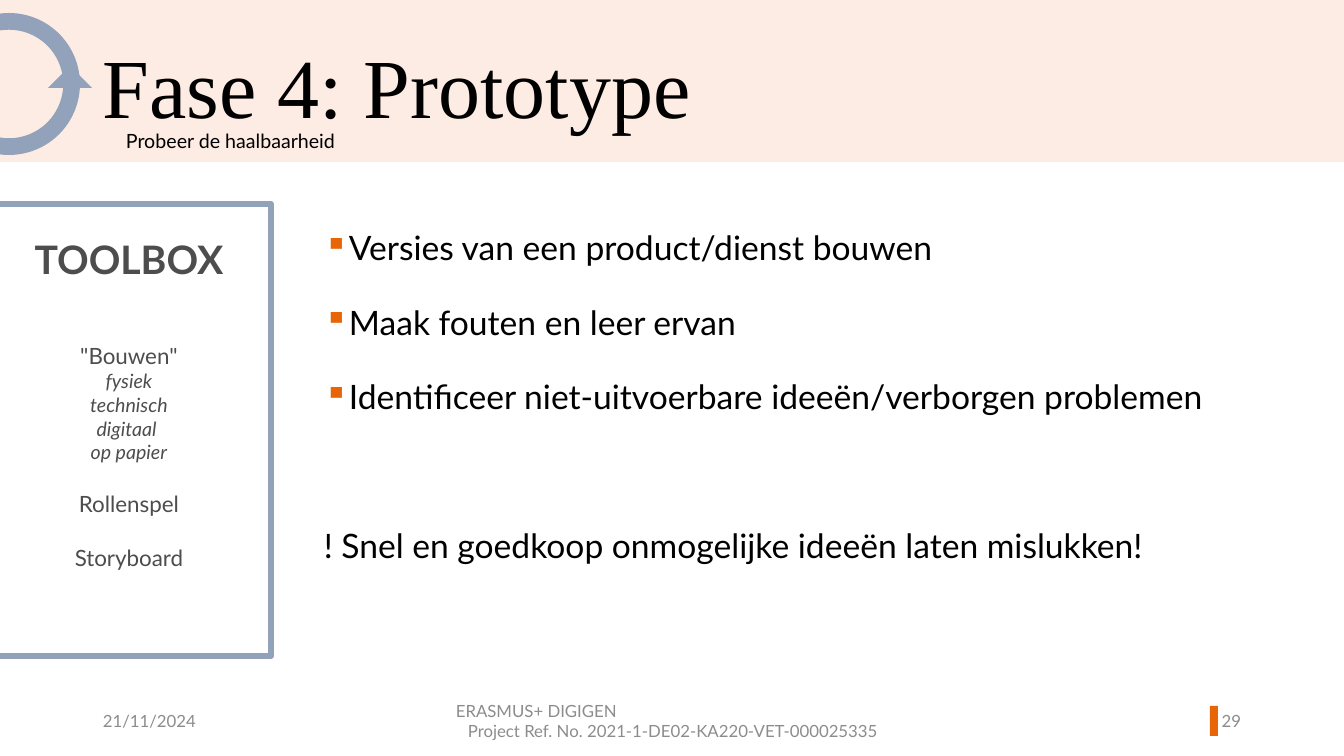
import pptx
import pptx.dml.color
import pptx.enum.shapes
import pptx.enum.text
import pptx.oxml
import pptx.oxml.ns
import pptx.util

RGB = pptx.dml.color.RGBColor
SHAPE = pptx.enum.shapes.MSO_SHAPE
ALIGN = pptx.enum.text.PP_ALIGN
ANCHOR = pptx.enum.text.MSO_ANCHOR
Pt = pptx.util.Pt

PEACH = RGB(0xFD, 0xEC, 0xE3)
ORANGE = RGB(0xE8, 0x65, 0x07)
STEEL = RGB(0x92, 0xA2, 0xBA)
WHITE = RGB(0xFF, 0xFF, 0xFF)
BLACK = RGB(0, 0, 0)
DARK = RGB(0x4D, 0x4D, 0x4D)
GREY = RGB(0x8C, 0x8C, 0x8C)

SCALE = 914400 / 100.8


def px(n):
    return round(n * SCALE)


def shape(parent, kind, x, y, w, h, fill, line=None, width=0):
    item = parent.shapes.add_shape(kind, px(x), px(y), px(w), px(h))
    item.shadow.inherit = False
    item.fill.solid()
    item.fill.fore_color.rgb = fill
    if line is None:
        item.line.fill.background()
    else:
        item.line.color.rgb = line
        item.line.width = Pt(width)
    return item


def box(slide, x, y, w, h, anchor=ANCHOR.TOP):
    frame = slide.shapes.add_textbox(px(x), px(y), px(w), px(h)).text_frame
    frame.word_wrap = True
    frame.vertical_anchor = anchor
    return frame


def write(frame, text, size, color, font="Lato", bold=False, italic=False,
          align=ALIGN.LEFT, before=0, spacing=1.0, bullet=False):
    """Fill the first empty paragraph, or add one."""
    para = frame.paragraphs[-1]
    if para.runs:
        para = frame.add_paragraph()
    para.alignment = align
    para.space_before = Pt(before)
    para.line_spacing = spacing
    run = para.add_run()
    run.text = text
    run.font.name = font
    run.font.size = Pt(size)
    run.font.bold = bold
    run.font.italic = italic
    run.font.color.rgb = color
    if bullet:
        props = para._p.get_or_add_pPr()
        props.set("marL", str(px(25)))
        props.set("indent", str(-px(25)))
        ns = pptx.oxml.ns.nsdecls("a")
        for xml in (f'<a:buClr {ns}><a:srgbClr val="{ORANGE}"/></a:buClr>',
                    f'<a:buChar {ns} char="▪"/>'):
            props.append(pptx.oxml.parse_xml(xml))


def header(slide, x, y, w, h):
    shape(slide, SHAPE.RECTANGLE, x, y, w, h, PEACH)
    # Title and subtitle
    write(box(slide, x + 93, y + 41, 1001, 86), "Fase 4: Prototype", 60, BLACK,
          font="Times New Roman", spacing=0.9)
    write(box(slide, x + 116, y + 124, 391, 34), "Probeer de haalbaarheid", 14, BLACK)
    # Loop arrow
    loop = slide.shapes.add_group_shape()
    ring = shape(loop, SHAPE.DONUT, x - 62, y + 13, 142, 142, STEEL)
    ring.adjustments[0] = 0.118
    shape(loop, SHAPE.ISOSCELES_TRIANGLE, x + 48, y + 66, 44, 22, STEEL)


def toolbox(slide, x, y, w, h):
    frame = shape(slide, SHAPE.RECTANGLE, x, y, w, h, WHITE, STEEL, 4.5).text_frame
    frame.word_wrap = True
    frame.vertical_anchor = ANCHOR.TOP
    frame.margin_top = px(31)
    write(frame, "TOOLBOX", 28, DARK, bold=True, align=ALIGN.CENTER)
    write(frame, '"Bouwen"', 16, DARK, align=ALIGN.CENTER, before=43.2)
    for way in ("fysiek", "technisch", "digitaal ", "op papier"):
        write(frame, way, 14, DARK, italic=True, align=ALIGN.CENTER)
    for tool in ("Rollenspel", "Storyboard"):
        write(frame, tool, 16, DARK, align=ALIGN.CENTER, before=19.2)


def body(slide, x, y, w, h):
    frame = box(slide, x, y, w, h)
    for point in ("Versies van een product/dienst bouwen",
                  "Maak fouten en leer ervan",
                  "Identificeer niet-uitvoerbare ideeën/verborgen problemen"):
        write(frame, point, 24, BLACK, before=10, spacing=1.5, bullet=True)
    write(frame, "! Snel en goedkoop onmogelijke ideeën laten mislukken!", 24, BLACK,
          before=63.2, spacing=1.5)


def footer(slide, x, y, w, h):
    write(box(slide, x, y, 302, h, ANCHOR.MIDDLE), "21/11/2024", 12, GREY)
    project = box(slide, x + 353, y, 454, h, ANCHOR.MIDDLE)
    write(project, "ERASMUS+ DIGIGEN", 12, GREY)
    write(project, "Project Ref. No. 2021-1-DE02-KA220-VET-000025335", 12, GREY,
          align=ALIGN.CENTER)
    # Page number with its marker
    shape(slide, SHAPE.RECTANGLE, x + w - 41, y + 5, 8, 30, ORANGE)
    write(box(slide, x + w - 66, y, 66, h, ANCHOR.MIDDLE), "29", 12, GREY,
          align=ALIGN.RIGHT)


def main():
    deck = pptx.Presentation()
    deck.slide_width, deck.slide_height = px(1344), px(756)
    slide = deck.slides.add_slide(deck.slide_layouts[6])
    header(slide, 0, 0, 1344, 162)
    toolbox(slide, -13, 204, 284, 452)
    body(slide, 314, 202, 938, 480)
    footer(slide, 93, 701, 1158, 40)
    deck.save("out.pptx")


if __name__ == "__main__":
    main()
